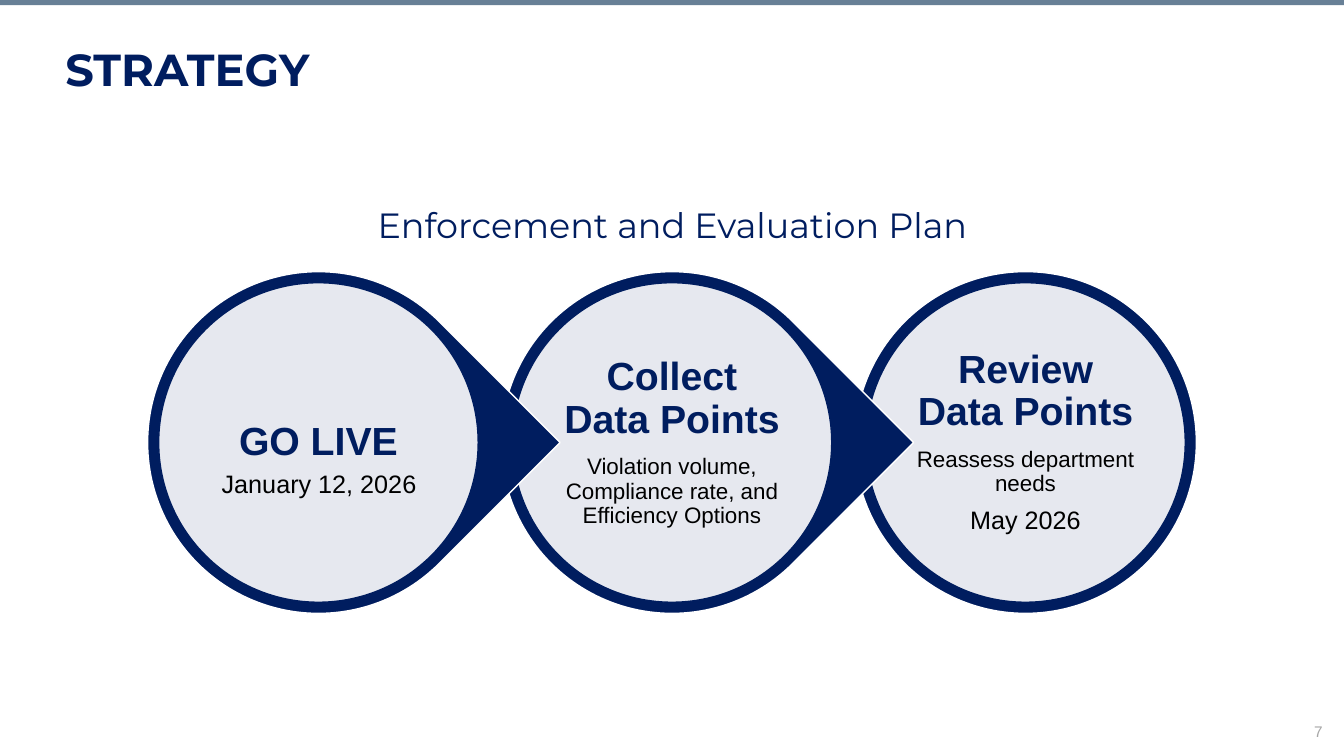
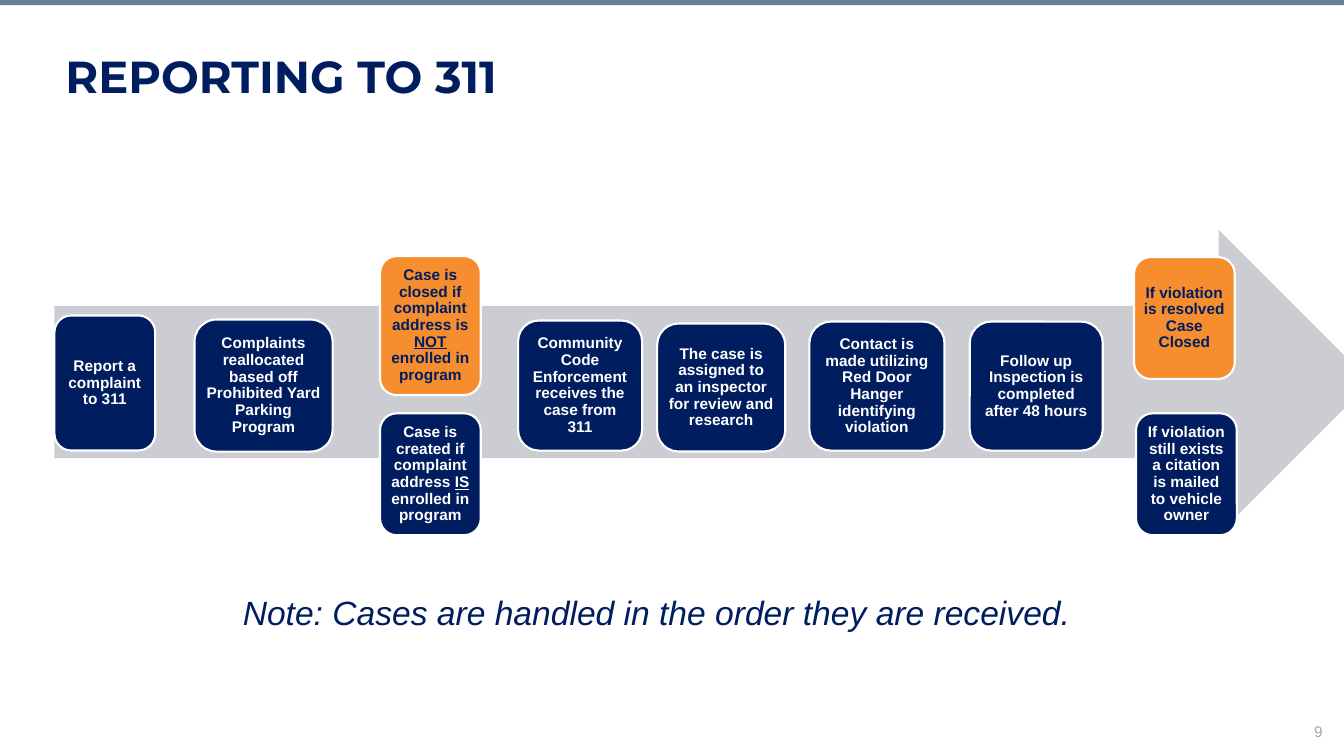
from lxml import etree
from pptx import Presentation
from pptx.dml.color import RGBColor
from pptx.enum.shapes import MSO_SHAPE
from pptx.enum.text import MSO_ANCHOR, PP_ALIGN
from pptx.oxml.ns import qn
from pptx.util import Inches, Pt

# Shapes and alignment
RECTANGLE = MSO_SHAPE.RECTANGLE
ROUNDED = MSO_SHAPE.ROUNDED_RECTANGLE
OVAL = MSO_SHAPE.OVAL
TEARDROP = MSO_SHAPE.TEAR
ARROW = MSO_SHAPE.RIGHT_ARROW
LEFT, CENTER, RIGHT = PP_ALIGN.LEFT, PP_ALIGN.CENTER, PP_ALIGN.RIGHT
MIDDLE = MSO_ANCHOR.MIDDLE

# Palette and fonts
NAVY = RGBColor(0x00, 0x1D, 0x5F)
ORANGE = RGBColor(0xF6, 0x8D, 0x2E)
SLATE = RGBColor(0x68, 0x80, 0x96)
SILVER = RGBColor(0xCC, 0xCD, 0xD2)
GRAY = RGBColor(0xA6, 0xA6, 0xA6)
WHITE = RGBColor(0xFF, 0xFF, 0xFF)
BLACK = RGBColor(0x00, 0x00, 0x00)
HEADING_FONT, BODY_FONT = "Montserrat", "Arial"

# Grid of tenth-inch cells
CELL = Inches(0.1)
COLUMNS, ROWS = 133.33, 75


class Deck:
    """Holds the style and the current slide; lengths are grid cells."""

    def __init__(self):
        self.presentation = Presentation()
        self.presentation.slide_width = round(COLUMNS * CELL)
        self.presentation.slide_height = round(ROWS * CELL)
        self.slide = None

    def add_slide(self, title, title_row, number):
        layout = self.presentation.slide_layouts[6]
        self.slide = self.presentation.slides.add_slide(layout)
        self.shape(RECTANGLE, 0, 0, COLUMNS, 0.5, SLATE)
        self.text(title, 5.5, title_row, 122.4, 7.7, 32, bold=True,
                  font=HEADING_FONT, spacing=0.9)
        self.text(number, 92, 71.1, 40.2, 2.9, 11, color=GRAY, align=RIGHT)

    def shape(self, kind, column, row, width, height, fill, line=None,
              line_width=1, opacity=None):
        box = [round(value * CELL) for value in (column, row, width, height)]
        shape = self.slide.shapes.add_shape(kind, *box)
        shape.shadow.inherit = False
        shape.fill.solid()
        shape.fill.fore_color.rgb = fill
        if opacity is not None:
            color = shape.element.spPr.find(".//" + qn("a:srgbClr"))
            etree.SubElement(color, qn("a:alpha"), val=str(opacity * 1000))
        if line is None:
            shape.line.fill.background()
        else:
            shape.line.color.rgb = line
            shape.line.width = Pt(line_width)
        return shape

    def set_text(self, paragraph, text, size, color=NAVY, bold=False,
                 italic=False, font=BODY_FONT, align=LEFT, spacing=1.0):
        """Fill a paragraph; words between underscores are underlined."""
        paragraph.alignment = align
        paragraph.line_spacing = spacing
        for index, part in enumerate(text.split("_")):
            run = paragraph.add_run()
            run.text = part
            run.font.name = font
            run.font.size = Pt(size)
            run.font.bold = bold
            run.font.italic = italic
            run.font.underline = index % 2 == 1
            run.font.color.rgb = color

    def text(self, text, column, row, width, height, size, **style):
        box = [round(value * CELL) for value in (column, row, width, height)]
        text_frame = self.slide.shapes.add_textbox(*box).text_frame
        text_frame.word_wrap = True
        self.set_text(text_frame.paragraphs[0], text, size, **style)

    def inner_frame(self, shape, inset):
        text_frame = shape.text_frame
        text_frame.word_wrap = True
        text_frame.vertical_anchor = MIDDLE
        text_frame.margin_left = text_frame.margin_right = round(inset * CELL)
        text_frame.margin_top = text_frame.margin_bottom = round(inset * CELL)
        return text_frame

    def stage(self, kind, center_column, center_row, heading, details):
        """A ringed circle holding a heading and (text, size) details."""
        for outline, size, fill, line, opacity in (
                (kind, 33.9, NAVY, WHITE, None), (OVAL, 31.7, WHITE, NAVY, 90)):
            shape = self.shape(outline, center_column - size / 2,
                               center_row - size / 2, size, size, fill, line,
                               opacity=opacity)
            if outline == TEARDROP:
                shape.rotation = 45
        text_frame = self.inner_frame(shape, 0)
        paragraph = text_frame.paragraphs[0]
        self.set_text(paragraph, heading, 28, bold=True, align=CENTER, spacing=0.9)
        space = 10
        for text, size in details:
            paragraph.space_after = Pt(space)
            paragraph = text_frame.add_paragraph()
            self.set_text(paragraph, text, size, BLACK, align=CENTER, spacing=0.9)
            space = 8

    def step(self, text, column, row, width, height, fill=NAVY):
        shape = self.shape(ROUNDED, column, row, width, height, fill, WHITE, 1.5)
        self.set_text(self.inner_frame(shape, 0.5).paragraphs[0], text, 11,
                      WHITE if fill == NAVY else NAVY, bold=True, align=CENTER,
                      spacing=0.9)


def strategy_slide(deck):
    deck.add_slide("STRATEGY", 4.3, "7")
    stages = [
        (TEARDROP, "GO LIVE", []),
        (TEARDROP, "Collect Data Points",
         [("Violation volume, Compliance rate, and Efficiency Options", 16)]),
        (OVAL, "Review Data Points",
         [("Reassess department needs", 16), ("May 2026", 18)]),
    ]
    # Right to left, so that each point overlaps the next circle
    for index, (kind, heading, details) in reversed(list(enumerate(stages))):
        center = COLUMNS / 2 + (index - 1) * 35.07
        deck.stage(kind, center, 43.9, heading, details)
    deck.text("January 12, 2026", 20.5, 46, 22.3, 4, 18, color=BLACK, align=CENTER)
    deck.text("Enforcement and Evaluation Plan", 25.4, 19.7, 82.6, 5.2, 25,
              font=HEADING_FONT, align=CENTER)


def reporting_slide(deck):
    deck.add_slide("REPORTING TO 311", 4.9, "9")
    deck.shape(ARROW, 5.4, 22.8, 130.6, 30.2, SILVER)

    # Steps along the arrow
    steps = [
        ("Report a complaint to 311", 5.4, 31.3, 10, 13.4),
        ("Complaints reallocated based off Prohibited Yard Parking Program",
         19.3, 31.7, 13.7, 13.1),
        ("Community Code Enforcement receives the case from 311",
         51.4, 31.8, 12.3, 12.9),
        ("The case is assigned to an inspector for review and research",
         65.2, 32.1, 12.7, 12.7),
        ("Contact is made utilizing Red Door Hanger identifying violation",
         80.3, 31.9, 13.4, 12.8),
        ("Follow up Inspection is completed after 48 hours",
         96.2, 31.9, 13.2, 12.8),
    ]
    for step in steps:
        deck.step(*step)

    # Branches: closed above, continued below
    deck.step("Case is closed if complaint address is _NOT_ enrolled in program",
              37.7, 25.4, 10, 13.8, ORANGE)
    deck.step("Case is created if complaint address _IS_ enrolled in program",
              37.7, 41, 10, 12.1)
    deck.step("If violation still exists a citation is mailed to vehicle owner",
              112.7, 41, 10, 12.1)
    deck.step("If violation is resolved Case Closed", 112.5, 25.5, 10, 12.1, ORANGE)

    deck.text("Note: Cases are handled in the order they are received.",
              23.1, 58.2, 87.9, 5, 24, italic=True)


def main():
    deck = Deck()
    strategy_slide(deck)
    reporting_slide(deck)
    deck.presentation.save("out.pptx")


if __name__ == "__main__":
    main()
